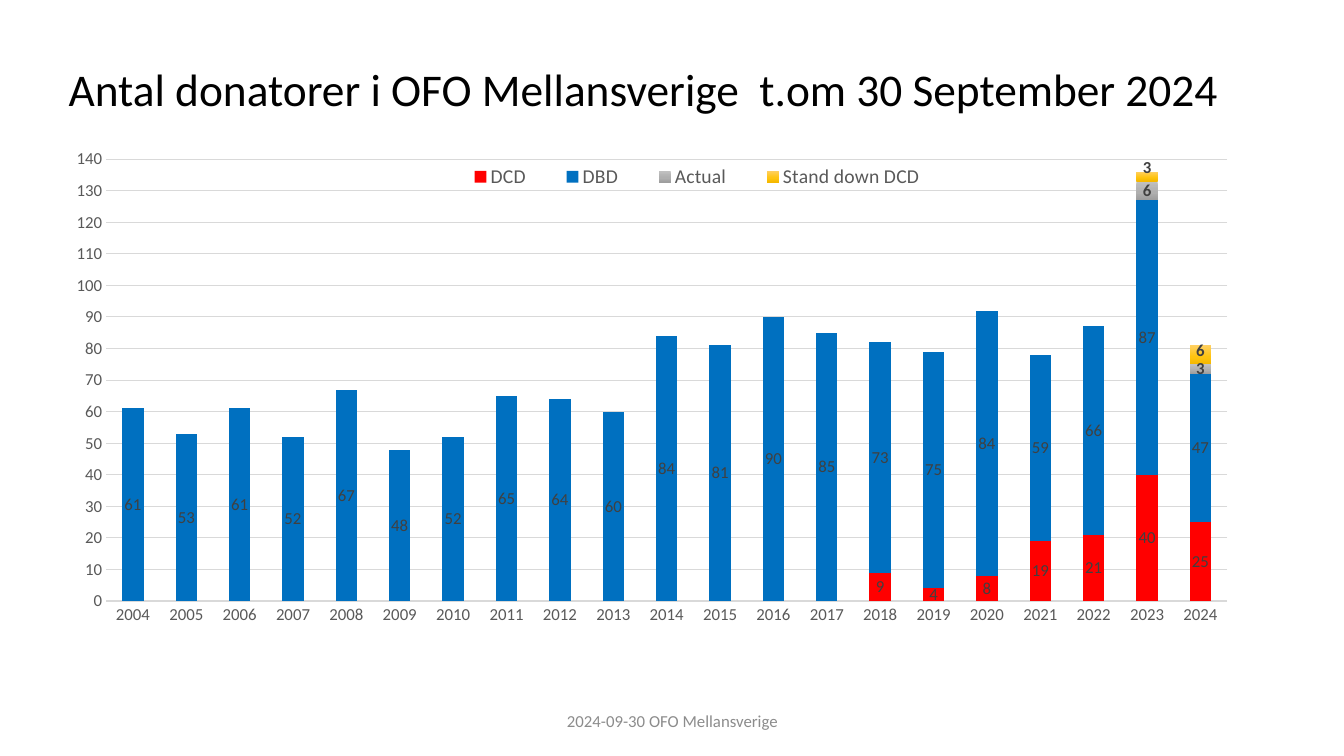
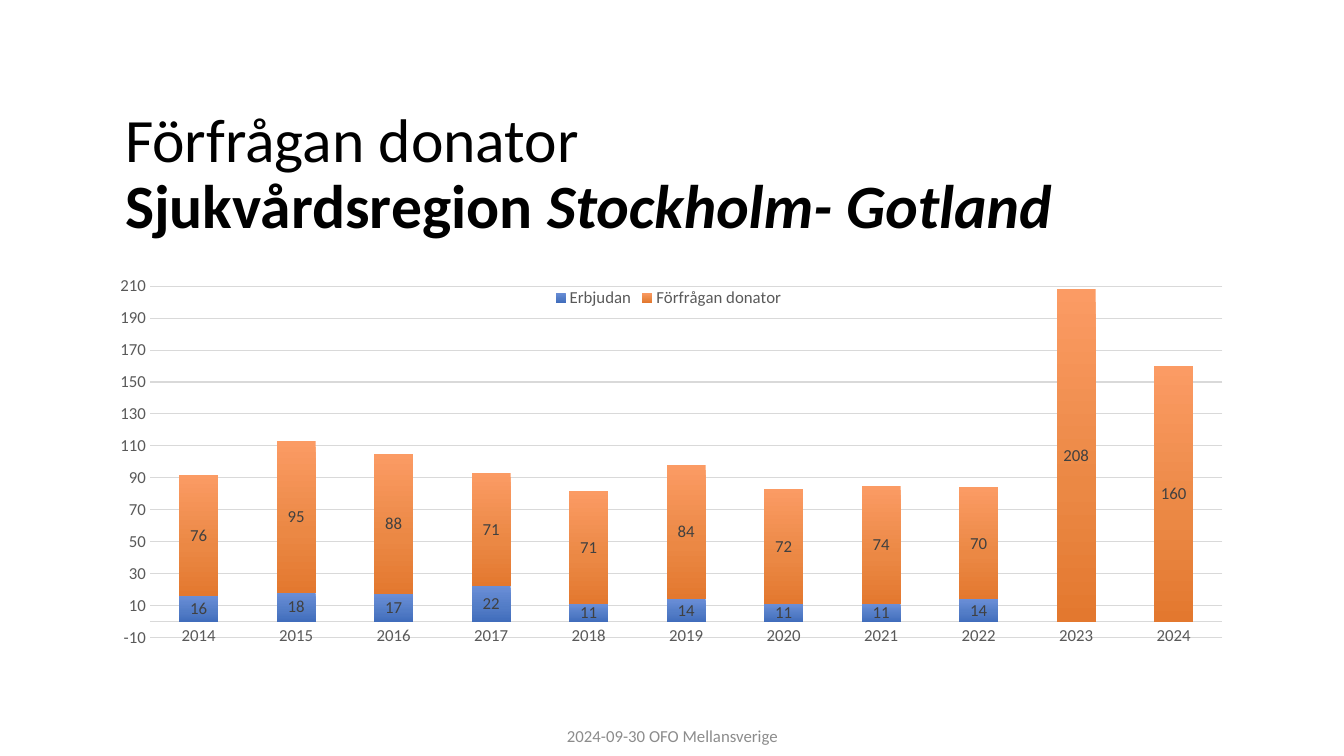
from dataclasses import dataclass

from pptx import Presentation
from pptx.chart.data import CategoryChartData as Data
from pptx.dml.color import RGBColor as Rgb
from pptx.enum.chart import XL_CHART_TYPE as Kind
from pptx.enum.chart import XL_LABEL_POSITION as Spot
from pptx.enum.chart import XL_LEGEND_POSITION as Side
from pptx.enum.chart import XL_TICK_MARK as Tick
from pptx.enum.text import MSO_ANCHOR as Anchor
from pptx.enum.text import MSO_AUTO_SIZE as Auto
from pptx.enum.text import PP_ALIGN as Align
from pptx.oxml import parse_xml
from pptx.oxml.ns import nsdecls, qn
from pptx.util import Inches, Pt

# Shared look
FONT = "Calibri"
FOOT = "2024-09-30 OFO Mellansverige"
COLORS = {
    "title": "000000", "foot": "8C8C8C", "axis": "595959",
    "label": "404040", "grid": "D9D9D9", "red": "FF0000", "blue": "0070C0",
}
GRADS = {
    "gray": ("C0C0C0", "AFAFAF", "9E9E9E"),
    "gold": ("FFD063", "FFC410", "F5B800"),
    "sky": ("6A8ED7", "527CC6", "416DBC"),
    "orange": ("FB9B64", "EB8844", "E3782F"),
}
STOPS = (0, 60, 100)
Box = tuple[float, float, float, float]


@dataclass
class Run:
    text: str
    bold: bool = False
    italic: bool = False


@dataclass
class Bars:
    name: str
    vals: list
    fill: str
    bold: bool = False
    spot: Spot = Spot.CENTER


@dataclass
class Page:
    title: list[list[Run]]  # lines of runs
    size: float
    head: Box
    foot: float
    chart: Box
    plot: Box
    start: int
    bars: list[Bars]
    low: int
    high: int
    step: int
    key: float
    spread: Box | None = None


def style(font, size: float, color: str, **more) -> None:
    for name, val in {"name": FONT, "size": Pt(size), **more}.items():
        setattr(font, name, val)
    font.color.rgb = Rgb.from_string(COLORS[color])


def place(shape, box: Box) -> None:
    for name, val in zip(("left", "top", "width", "height"), box):
        setattr(shape, name, Inches(val))


def layout(parent, index: int, box: Box, inner: bool = False) -> None:
    """Fix a chart part at fractions of the chart area."""
    for old in parent.findall(qn("c:layout")):
        parent.remove(old)
    target = '<c:layoutTarget val="inner"/>' if inner else ""
    modes = '<c:xMode val="edge"/><c:yMode val="edge"/>'
    sizes = "".join(f'<c:{k} val="{v}"/>' for k, v in zip("xywh", box))
    parent.insert(index, parse_xml(
        f'<c:layout {nsdecls("c")}><c:manualLayout>{target}{modes}{sizes}'
        "</c:manualLayout></c:layout>"))


def paint(series, fill: str) -> None:
    if fill in COLORS:
        series.format.fill.solid()
        series.format.fill.fore_color.rgb = Rgb.from_string(COLORS[fill])
        return
    stops = "".join(
        f'<a:gs pos="{pos * 1000}"><a:srgbClr val="{hue}"/></a:gs>'
        for pos, hue in zip(STOPS, GRADS[fill]))
    series._element.get_or_add_spPr().append(parse_xml(
        f'<a:gradFill {nsdecls("a")} rotWithShape="1"><a:gsLst>{stops}</a:gsLst>'
        '<a:lin ang="5400000" scaled="0"/></a:gradFill>'))


def add_title(slide, page: Page) -> None:
    title = slide.shapes.title
    place(title, page.head)
    frame = title.text_frame
    frame.auto_size = Auto.NONE
    frame.vertical_anchor = Anchor.MIDDLE
    para = frame.paragraphs[0]
    para.alignment, para.line_spacing = Align.LEFT, 0.9
    for i, line in enumerate(page.title):
        if i:
            para.add_line_break()
        for part in line:
            run = para.add_run()
            run.text = part.text
            style(run.font, page.size, "title", bold=part.bold, italic=part.italic)


def add_foot(slide, top: float) -> None:
    box = slide.shapes.add_textbox(
        Inches(4.42), Inches(top), Inches(4.5), Inches(0.4))
    frame = box.text_frame
    frame.word_wrap = True
    frame.vertical_anchor = Anchor.MIDDLE
    para = frame.paragraphs[0]
    para.alignment, para.space_after = Align.CENTER, Pt(6)
    run = para.add_run()
    run.text = FOOT
    style(run.font, 12, "foot")


def add_bars(slide, page: Page) -> None:
    data = Data()
    data.categories = [str(year) for year in range(page.start, 2025)]
    for bar in page.bars:
        data.add_series(bar.name, bar.vals)
    chart = slide.shapes.add_chart(
        Kind.COLUMN_STACKED, *map(Inches, page.chart), data).chart
    chart.has_title = False
    style(chart.font, 10, "title")
    layout(chart._chartSpace.chart.plotArea, 0, page.plot, inner=True)

    # Axes
    cat, val = chart.category_axis, chart.value_axis
    for axis in (cat, val):
        axis.major_tick_mark = axis.minor_tick_mark = Tick.NONE
        style(axis.tick_labels.font, 12, "axis")
    val.minimum_scale, val.maximum_scale = page.low, page.high
    val.major_unit = page.step
    val.has_major_gridlines = True
    val.format.line.fill.background()
    for line, width in ((cat.format.line, 1), (val.major_gridlines.format.line, 0.75)):
        line.color.rgb = Rgb.from_string(COLORS["grid"])
        line.width = Pt(width)

    # Legend
    chart.has_legend = True
    legend = chart.legend
    legend.position = Side.TOP
    legend.include_in_layout = False
    style(legend.font, page.key, "axis")
    if page.spread:
        layout(legend._element, 1, page.spread)

    # Columns and their labels
    plot = chart.plots[0]
    plot.gap_width, plot.overlap = 150, 100
    plot.vary_by_categories = False
    for series, bar in zip(plot.series, page.bars):
        paint(series, bar.fill)
        series.invert_if_negative = False
        labels = series.data_labels
        labels.show_value = True
        labels.position = bar.spot
        style(labels.font, 12, "label", bold=bar.bold)


PAGES = [
    Page(
        title=[[Run("Antal donatorer i OFO Mellansverige  t.om 30 September 2024")]],
        size=32.4, head=(0.58, 0.41, 12.34, 1.01), foot=6.95,
        chart=(0.58, 1.29, 11.84, 5.46), plot=(0.04, 0.053, 0.939, 0.803),
        start=2004, low=0, high=140, step=10, key=14,
        spread=(0.32, 0.05, 0.43, 0.07),
        bars=[
            Bars("DCD", [None] * 14 + [9, 4, 8, 19, 21, 40, 25], "red"),
            Bars("DBD", [61, 53, 61, 52, 67, 48, 52, 65, 64, 60, 84, 81, 90, 85,
                         73, 75, 84, 59, 66, 87, 47], "blue"),
            Bars("Actual", [None] * 19 + [6, 3], "gray", True),
            Bars("Stand down DCD", [None] * 19 + [3, 6], "gold", True,
                 Spot.INSIDE_BASE),
        ],
    ),
    Page(
        title=[[Run("Förfrågan donator")],
               [Run("Sjukvårdsregion ", True), Run("Stockholm- Gotland", True, True)]],
        size=44, head=(1.14, 0.89, 11.13, 1.7), foot=7.1,
        chart=(0.99, 2.74, 11.28, 4.07), plot=(0.044, 0.024, 0.943, 0.857),
        start=2014, low=-10, high=210, step=20, key=12,
        bars=[
            Bars("Erbjudan", [16, 18, 17, 22, 11, 14, 11, 11, 14, None, None], "sky"),
            Bars("Förfrågan donator",
                 [76, 95, 88, 71, 71, 84, 72, 74, 70, 208, 160], "orange"),
        ],
    ),
]


def main() -> None:
    deck = Presentation()
    deck.slide_width, deck.slide_height = Inches(13.33), Inches(7.5)
    for page in PAGES:
        slide = deck.slides.add_slide(deck.slide_layouts[5])
        add_title(slide, page)
        add_foot(slide, page.foot)
        add_bars(slide, page)
    deck.save("out.pptx")


if __name__ == "__main__":
    main()
